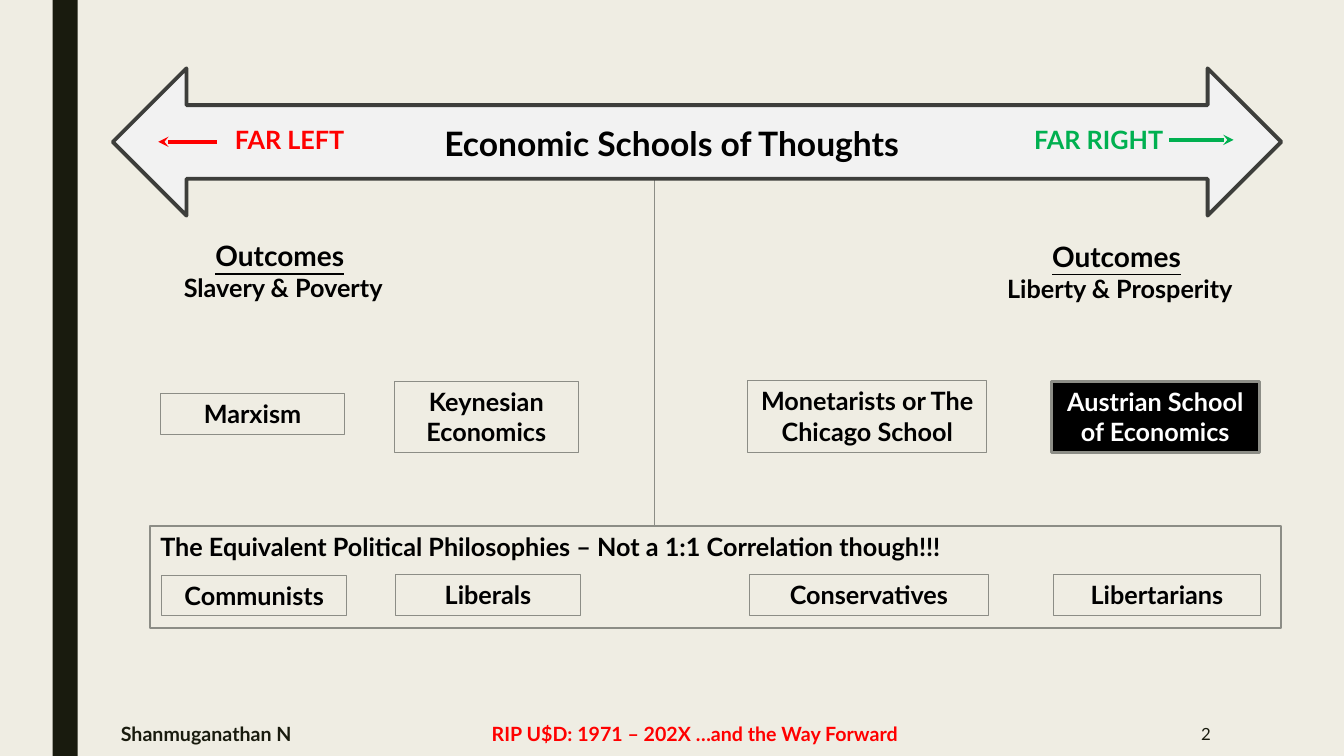
from lxml import etree
from pptx import Presentation
from pptx.dml.color import RGBColor
from pptx.enum.shapes import MSO_CONNECTOR, MSO_SHAPE
from pptx.enum.text import MSO_ANCHOR, MSO_AUTO_SIZE, PP_ALIGN
from pptx.oxml.ns import qn
from pptx.util import Pt

RECT, DOUBLE_ARROW = MSO_SHAPE.RECTANGLE, MSO_SHAPE.LEFT_RIGHT_ARROW
STRAIGHT = MSO_CONNECTOR.STRAIGHT
TOP, MIDDLE = MSO_ANCHOR.TOP, MSO_ANCHOR.MIDDLE
FIT = MSO_AUTO_SIZE.SHAPE_TO_FIT_TEXT
LEFT, CENTER, RIGHT = PP_ALIGN.LEFT, PP_ALIGN.CENTER, PP_ALIGN.RIGHT

FONT = "Lato"
CREAM = RGBColor(0xEF, 0xED, 0xE3)
DARK = RGBColor(0x19, 0x1B, 0x0E)
GREY = RGBColor(0x8C, 0x8D, 0x86)
CHARCOAL = RGBColor(0x3D, 0x3E, 0x3B)
PALE = RGBColor(0xF2, 0xF2, 0xF2)
BLACK = RGBColor(0, 0, 0)
WHITE = RGBColor(0xFF, 0xFF, 0xFF)
RED = RGBColor(0xFF, 0, 0)
GREEN = RGBColor(0, 0xB0, 0x50)

# Each column: left, width, school, its top and height, philosophy, its top
COLUMNS = [
    (114.5, 131.8, "Marxism", 281.2, 29, "Communists", 411),
    (281.5, 131.8, "Keynesian Economics", 272.2, 51, "Liberals", 410.4),
    (534.2, 170.6, "Monetarists or The Chicago School", 272, 51, "Conservatives", 410.4),
    (751, 148.4, "Austrian School of Economics", 272.2, 51, "Libertarians", 410.4),
]
HIGHLIGHT = "Austrian School of Economics"
PHILOSOPHY_SHIFT = 1.2


def set_font(font, size, color, bold=True):
    font.name, font.size, font.bold = FONT, Pt(size), bold
    font.color.rgb = color


def write(sp, text, size, color, align=LEFT, anchor=TOP, bold=True):
    tf = sp.text_frame
    tf.word_wrap = True
    tf.vertical_anchor = anchor
    if anchor == TOP:
        tf.auto_size = FIT
    p = tf.paragraphs[0]
    p.text = text
    p.alignment = align
    set_font(p.font, size, color, bold)
    return p


def add_label(slide, x, y, w, h, text, size, color, **layout):
    sp = slide.shapes.add_textbox(Pt(x), Pt(y), Pt(w), Pt(h))
    return write(sp, text, size, color, **layout)


def add_block(slide, x, y, w, h, fill=None, line=None, weight=0.75, kind=RECT):
    sp = slide.shapes.add_shape(kind, Pt(x), Pt(y), Pt(w), Pt(h))
    sp.shadow.inherit = False
    if fill is None:
        sp.fill.background()
    else:
        sp.fill.solid()
        sp.fill.fore_color.rgb = fill
    if line is None:
        sp.line.fill.background()
    else:
        sp.line.color.rgb = line
        sp.line.width = Pt(weight)
    return sp


def add_line(slide, x1, y1, x2, y2, color, weight, arrow=False):
    cx = slide.shapes.add_connector(STRAIGHT, Pt(x1), Pt(y1), Pt(x2), Pt(y2))
    cx.line.color.rgb = color
    cx.line.width = Pt(weight)
    if arrow:
        ln = cx.line._get_or_add_ln()
        etree.SubElement(ln, qn("a:tailEnd"), type="stealth")
    etree.SubElement(cx._element.spPr, qn("a:effectLst"))


def add_spectrum(slide, x, y, w, h):
    """Double arrow with its title and the two extremes."""
    add_block(slide, x, y, w, h, PALE, CHARCOAL, 2.75, DOUBLE_ARROW)
    add_label(slide, x + 191.5, y + 35.2, 415.4, 36,
              "Economic Schools of Thoughts", 24, BLACK, align=CENTER)
    add_label(slide, x + 80, y + 36.7, 131, 29, "FAR LEFT", 18, RED)
    add_line(slide, x + 74.2, y + 52.5, x + 32.4, y + 52.5, RED, 2.5, True)
    add_label(slide, x + w - 183.6, y + 36.3, 131, 29, "FAR RIGHT", 18, GREEN)
    add_line(slide, x + w - 80, y + 51.1, x + w - 34, y + 51.1, GREEN, 2.5, True)


def add_outcome(slide, x, y, w, h, outcome):
    p = add_label(slide, x, y, w, h, "", 20, BLACK, align=CENTER)
    for text, size, underlined in (("Outcomes", 20, True), (" ", 20, False),
                                   (outcome, 18, False)):
        if text == outcome:
            p.add_line_break()
        r = p.add_run()
        r.text = text
        set_font(r.font, size, BLACK)
        r.font.underline = underlined


def add_schools(slide):
    for x, w, school, y, h, _, _ in COLUMNS:
        if school == HIGHLIGHT:
            sp, color = add_block(slide, x, y, w, h, BLACK, GREY, 2), WHITE
        else:
            sp, color = add_block(slide, x, y, w, h, line=GREY), BLACK
        write(sp, school, 18, color, align=CENTER)


def add_philosophies(slide, x, y, w, h):
    panel = add_block(slide, x, y, w, h, CREAM, GREY, 1.25)
    write(panel, "The Equivalent Political Philosophies – Not a 1:1 "
          "Correlation though!!!", 18, BLACK)
    panel.text_frame.auto_size = MSO_AUTO_SIZE.NONE
    for left, width, _, _, _, name, top in COLUMNS:
        sp = add_block(slide, left + PHILOSOPHY_SHIFT, top, width, 29, line=GREY)
        write(sp, name, 18, BLACK, align=CENTER)


def add_footer(slide, y, h):
    add_label(slide, 79.2, y, 137.5, h, "Shanmuganathan N", 14, DARK, anchor=MIDDLE)
    add_label(slide, 270, y, 452.9, h, "RIP U$D: 1971 – 202X …and the Way Forward",
              14, RED, align=CENTER, anchor=MIDDLE)
    add_label(slide, 746, y, 126, h, "2", 12, DARK, align=RIGHT, anchor=MIDDLE,
              bold=False)


def main():
    prs = Presentation()
    prs.slide_width, prs.slide_height = Pt(960), Pt(540)
    slide = prs.slides.add_slide(prs.slide_layouts[6])
    slide.background.fill.solid()
    slide.background.fill.fore_color.rgb = CREAM

    add_block(slide, 37.5, 0, 18, 540, DARK)
    add_line(slide, 467.5, 116, 467.5, 376, GREY, 0.5)
    add_spectrum(slide, 80.6, 48.8, 834.6, 105.2)
    add_outcome(slide, 113, 167, 178.6, 53.3, "Slavery & Poverty")
    add_outcome(slide, 710.6, 167.5, 178.6, 53.3, "Liberty & Prosperity")
    add_schools(slide)
    add_philosophies(slide, 107.4, 375.8, 807.8, 72.6)
    add_footer(slide, 508.3, 31.7)
    prs.save("out.pptx")


if __name__ == "__main__":
    main()
